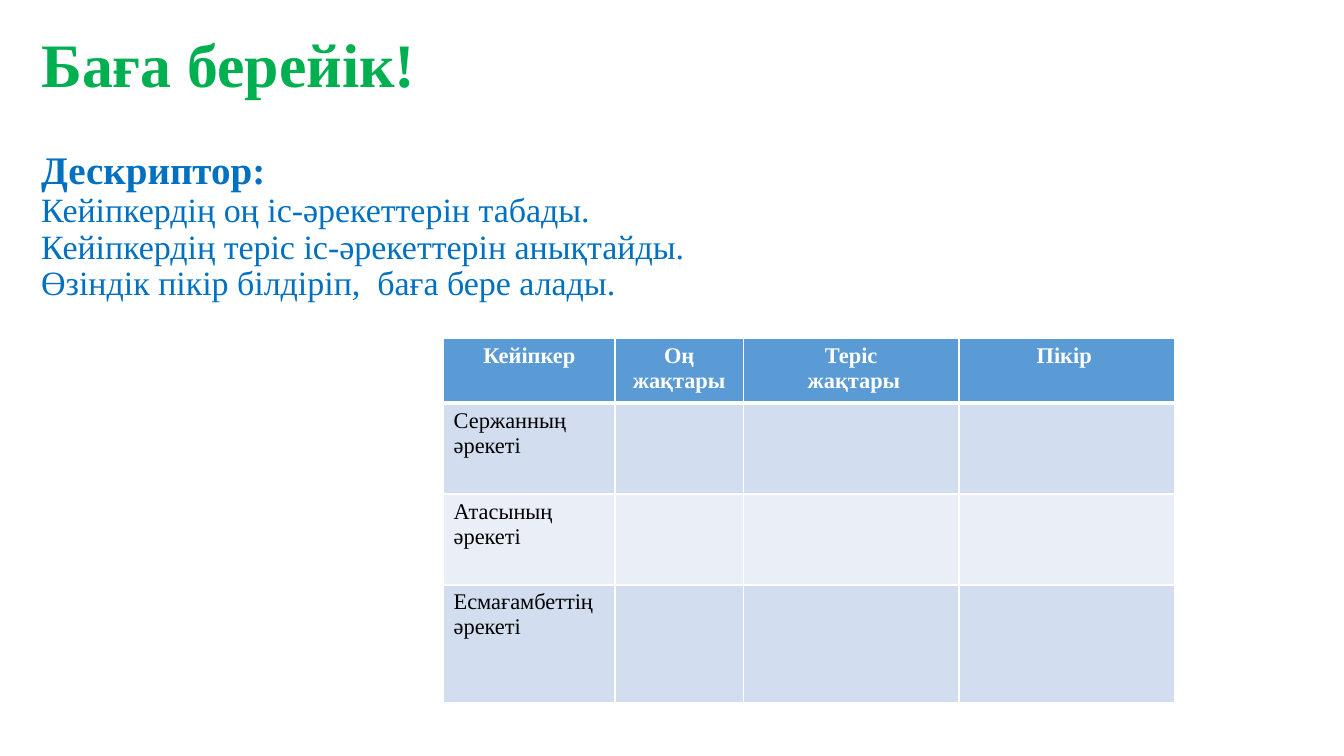
"""Build the slide with a title, descriptors and an assessment table."""
from pptx import Presentation
from pptx.dml.color import RGBColor
from pptx.enum.text import PP_ALIGN
from pptx.oxml import parse_xml
from pptx.oxml.ns import nsdecls
from pptx.util import Cm, Pt


def paint(fill, tone):
    fill.solid()
    fill.fore_color.rgb = RGBColor.from_string(tone)


def write(par, text, size, tone, bold):
    run = par.add_run()
    run.text = text
    look = {"name": "Times New Roman", "size": Pt(size), "bold": bold}
    for key, value in look.items():
        setattr(run.font, key, value)
    paint(run.font.fill, tone)


deck = Presentation()
deck.slide_width, deck.slide_height = Cm(33.87), Cm(19.05)
slide = deck.slides.add_slide(deck.slide_layouts[6])

box = slide.shapes.add_textbox(Cm(0.79), Cm(0.85), Cm(30.25), Cm(7.1))
frame = box.text_frame
frame.word_wrap = True
frame.margin_top = 0
lines = [
    ("Баға берейік!", 44.1, "00B050", True, 0),
    ("Дескриптор:", 27.9, "0070C0", True, 36),
    ("Кейіпкердің оң іс-әрекеттерін табады.", 24.3, "0070C0", False, 0),
    ("Кейіпкердің теріс іс-әрекеттерін анықтайды.", 24.3, "0070C0", False, 0),
    ("Өзіндік пікір білдіріп,  баға бере алады.", 24.3, "0070C0", False, 0),
]
for i, (text, size, tone, bold, gap) in enumerate(lines):
    par = frame.add_paragraph() if i else frame.paragraphs[0]
    par.line_spacing = 0.9
    par.space_before = Pt(gap)
    write(par, text, size, tone, bold)

widths = [4.32, 3.23, 5.44, 5.44]
heights = [1.63, 2.29, 2.29, 2.97]
rows = [
    ["Кейіпкер", "Оң жақтары", "Теріс\n жақтары", "Пікір "],
    ["Сержанның әрекеті", "", "", ""],
    ["Атасының әрекеті", "", "", ""],
    ["Есмағамбеттің әрекеті", "", "", ""],
]
fills = ["5B9BD5", "D2DEEF", "EAEFF7", "D2DEEF"]
table = slide.shapes.add_table(
    4, 4, Cm(11.18), Cm(8.53), Cm(sum(widths)), Cm(sum(heights))).table
for col, width in zip(table.columns, widths):
    col.width = Cm(width)
for row, height in zip(table.rows, heights):
    row.height = Cm(height)

for r, texts in enumerate(rows):
    head = r == 0
    for c, text in enumerate(texts):
        cell = table.cell(r, c)
        for side in "LRTB":
            thick = (r, side) in [(0, "B"), (1, "T")]
            cell._tc.get_or_add_tcPr().append(parse_xml(
                f'<a:ln{side} {nsdecls("a")} w="{Pt(3 if thick else 1)}">'
                '<a:solidFill><a:srgbClr val="FFFFFF"/></a:solidFill>'
                f'</a:ln{side}>'))
        paint(cell.fill, fills[r])
        if not text:
            continue
        for i, part in enumerate(text.split("\n")):
            body = cell.text_frame
            par = body.add_paragraph() if i else body.paragraphs[0]
            par.alignment = PP_ALIGN.CENTER if head else PP_ALIGN.LEFT
            write(par, part, 16, "FFFFFF" if head else "000000", head)

deck.save("out.pptx")
